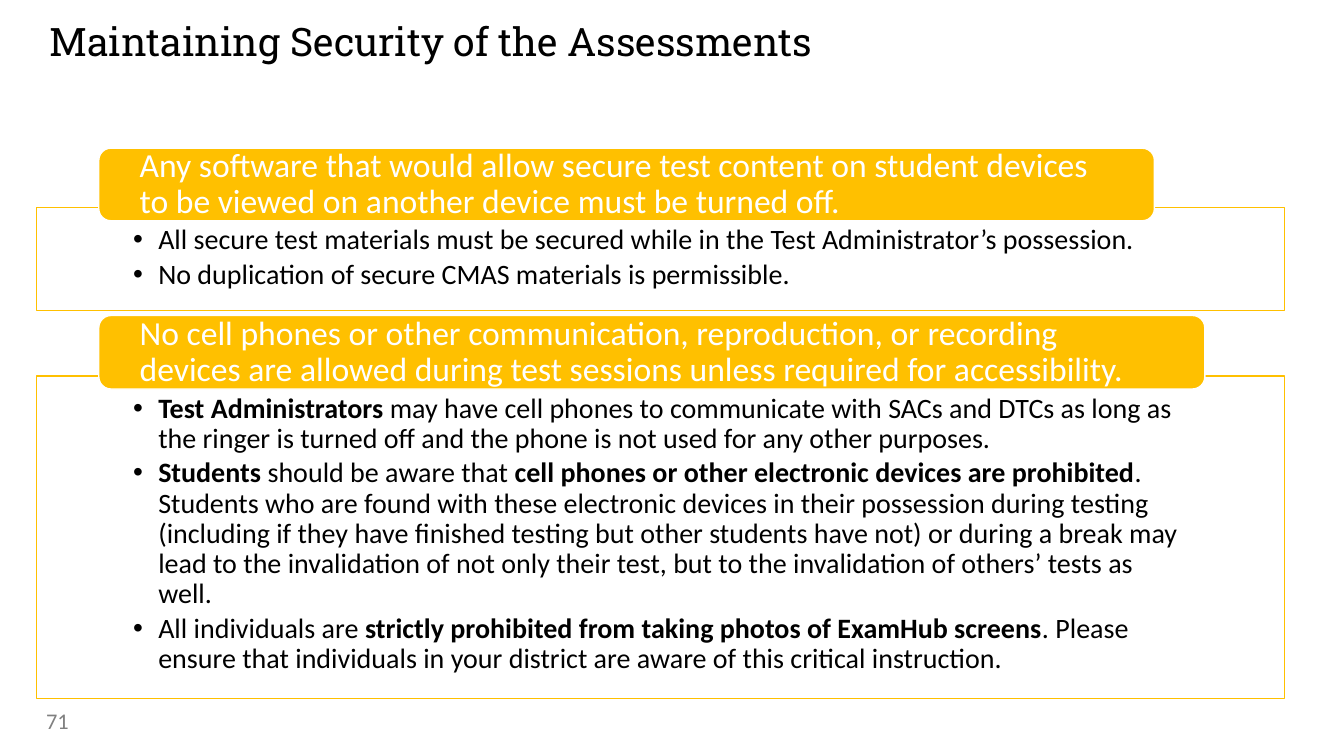
from lxml import etree
from pptx import Presentation, util as u
from pptx.dml.color import RGBColor
from pptx.enum import shapes, text
from pptx.oxml.ns import qn

PX = 9144
GOLD, WHITE, BLACK, GREY = "FFC000", "FFFFFF", "000000", "808080"
PANEL_LEFT, PANEL_W, PILL_LEFT = 36, 1238, 98

SECTIONS = [
    dict(
        pill=(147, 1047, 72), panel=(206, 102),
        heading="Any software that would allow secure test content on student devices "
                "to be viewed on another device must be turned off.",
        bullets=[
            "All secure test materials must be secured while in the Test Administrator’s possession.",
            "No duplication of secure CMAS materials is permissible.",
        ],
    ),
    dict(
        pill=(313, 1097, 73), panel=(373, 320),
        heading="No cell phones or other communication, reproduction, or recording devices "
                "are allowed during test sessions unless required for accessibility.",
        bullets=[
            "**Test Administrators **may have cell phones to communicate with SACs and DTCs "
            "as long as the ringer is turned off and the phone is not used for any other purposes.",
            "**Students** should be aware that **cell phones or other electronic devices are "
            "prohibited**. Students who are found with these electronic devices in their "
            "possession during testing (including if they have finished testing but other "
            "students have not) or during a break may lead to the invalidation of not only "
            "their test, but to the invalidation of others’ tests as well.",
            "All individuals are **strictly prohibited from taking photos of ExamHub screens**. "
            "Please ensure that individuals in your district are aware of this critical instruction.",
        ],
    ),
]


def rgb(value):
    return RGBColor.from_string(value)


def write(tf, paragraphs, size, color, font="Calibri", anchor=text.MSO_ANCHOR.TOP,
          insets=(0, 0, 0, 0), spacing=0.9, after=0, bullet=False):
    tf.word_wrap = True
    tf.auto_size = text.MSO_AUTO_SIZE.NONE
    tf.vertical_anchor = anchor
    tf.margin_left, tf.margin_top, tf.margin_right, tf.margin_bottom = (n * PX for n in insets)
    for i, content in enumerate(paragraphs):
        p = tf.paragraphs[0] if i == 0 else tf.add_paragraph()
        if bullet:
            p.level = 1
            pPr = p._p.get_or_add_pPr()
            pPr.set("marL", str(25 * PX))
            pPr.set("indent", str(-25 * PX))
            etree.SubElement(pPr, qn("a:buFont")).set("typeface", "Arial")
            etree.SubElement(pPr, qn("a:buChar")).set("char", "•")
        p.alignment = text.PP_ALIGN.LEFT
        p.line_spacing = spacing
        p.space_before = u.Pt(0)
        p.space_after = u.Pt(after)
        for j, part in enumerate(content.split("**")):
            if part:
                r = p.add_run()
                r.text = part
                r.font.name = font
                r.font.size = u.Pt(size)
                r.font.bold = j % 2 == 1
                r.font.color.rgb = rgb(color)


class Deck:
    def __init__(self, width, height):
        self.prs = Presentation()
        self.prs.slide_width, self.prs.slide_height = width * PX, height * PX
        self.s = self.prs.slides.add_slide(self.prs.slide_layouts[5])

    def title(self, x, y, w, h, content):
        sp = self.s.shapes.title
        sp.left, sp.top, sp.width, sp.height = (n * PX for n in (x, y, w, h))
        write(sp.text_frame, [content], 28, BLACK, font="Roboto Slab")

    def box(self, kind, x, y, w, h, fill, line, alpha=None):
        sp = self.s.shapes.add_shape(kind, *(n * PX for n in (x, y, w, h)))
        sp.shadow.inherit = False
        sp.fill.solid()
        sp.fill.fore_color.rgb = rgb(fill)
        if alpha:
            clr = sp._element.spPr.find(qn("a:solidFill"))[0]
            etree.SubElement(clr, qn("a:alpha")).set("val", str(alpha * 1000))
        sp.line.color.rgb = rgb(line)
        sp.line.width = u.Pt(1)
        return sp

    def panel(self, y, h, bullets):
        sp = self.box(shapes.MSO_SHAPE.RECTANGLE, PANEL_LEFT, y, PANEL_W, h, WHITE, GOLD, alpha=90)
        write(sp.text_frame, bullets, 20, BLACK, insets=(96, 18, 96, 16), after=3, bullet=True)

    def pill(self, y, w, h, heading):
        sp = self.box(shapes.MSO_SHAPE.ROUNDED_RECTANGLE, PILL_LEFT, y, w, h, GOLD, WHITE)
        write(sp.text_frame, [heading], 24, WHITE, anchor=text.MSO_ANCHOR.MIDDLE,
              insets=(37, 3, 37, 3))

    def label(self, x, y, w, h, content):
        sp = self.s.shapes.add_textbox(*(n * PX for n in (x, y, w, h)))
        write(sp.text_frame, [content], 16, GREY, anchor=text.MSO_ANCHOR.MIDDLE,
              insets=(10, 5, 10, 5), spacing=1.0)


def main():
    deck = Deck(1333, 750)
    deck.title(49, 22, 882, 98, "Maintaining Security of the Assessments")
    for section in SECTIONS:
        deck.panel(*section["panel"], section["bullets"])
        deck.pill(*section["pill"], section["heading"])
    deck.label(36, 695, 300, 40, "71")
    deck.prs.save("out.pptx")


if __name__ == "__main__":
    main()
